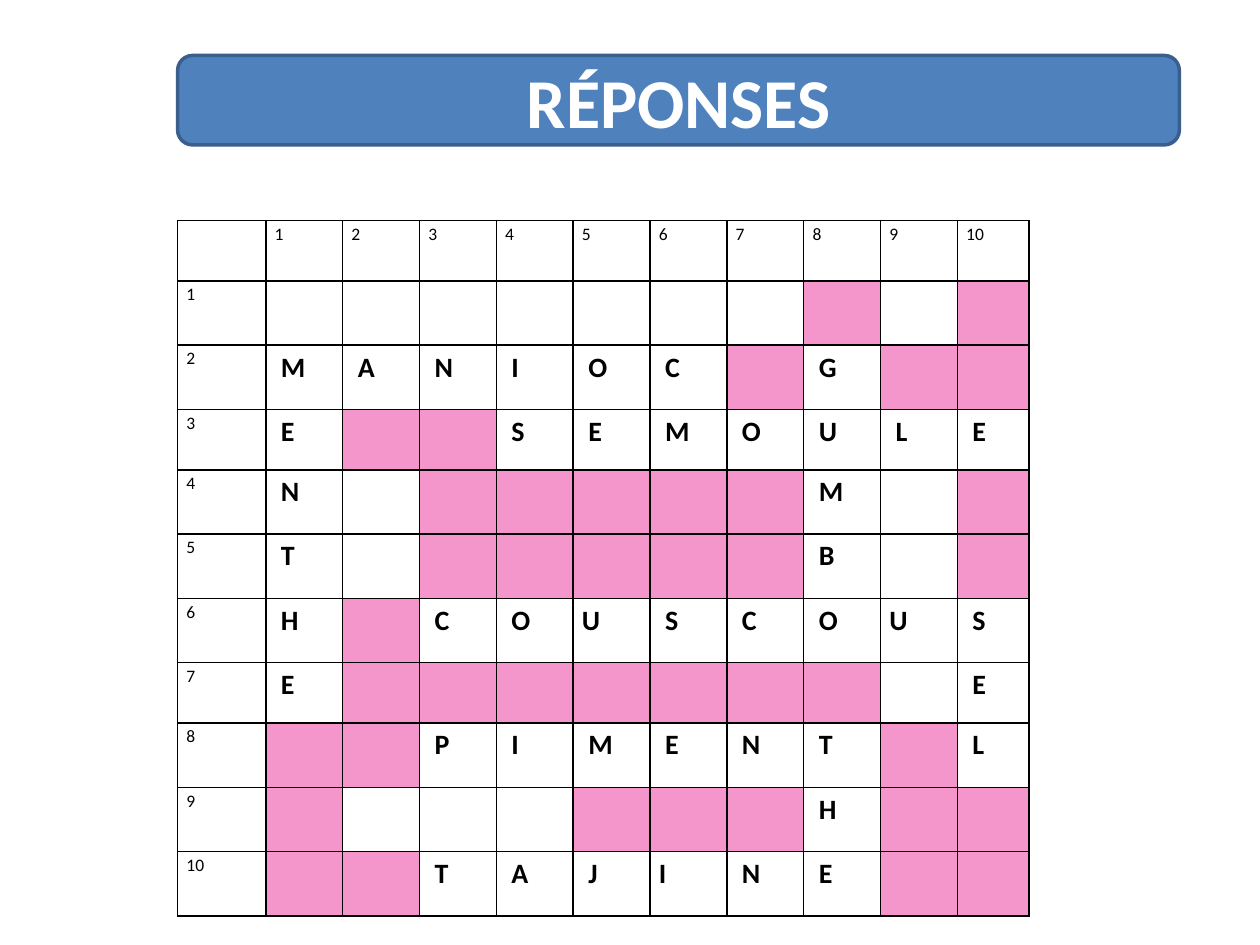
import lxml.etree
import pptx
import pptx.dml.color
import pptx.enum.shapes
import pptx.enum.text
import pptx.oxml.ns
import pptx.util

Inches = pptx.util.Inches
Pt = pptx.util.Pt

COLORS = {
    "banner": "4F81BD",
    "banner_line": "3A5F8C",
    "blocked": "F496CC",
    "white": "FFFFFF",
    "black": "000000",
}

# One string per crossword row: "#" is a blocked square, "." an empty one.
CROSSWORD = [
    ".......#.#",
    "MANIOC#G##",
    "E##SEMOULE",
    "N.#####M.#",
    "T.#####B.#",
    "H#COUSCOUS",
    "E#######.E",
    "##PIMENT#L",
    "#...###H##",
    "##TAJINE##",
]
FLUSH_LETTERS = {(6, 5), (6, 9), (10, 6)}  # (row, column) of letters without indent
COLUMN_WIDTHS = [0.7] + [0.61] * 9 + [0.57]
SHORT_ROWS = {0, 3, 7}
ROW_HEIGHTS = [0.48 if row in SHORT_ROWS else 0.51 for row in range(11)]


class SlideBuilder:
    font = "Calibri"
    cell_margin = 0.07
    letter_indent = 0.05

    def __init__(self, slide):
        self.slide = slide

    def color(self, name):
        return pptx.dml.color.RGBColor.from_string(COLORS[name])

    def format_text(self, p, size, color, bold=False):
        for r in p.runs:
            r.font.name = self.font
            r.font.size = Pt(size)
            r.font.bold = bold
            r.font.color.rgb = self.color(color)

    def banner(self, text, left, top, width, height):
        sp = self.slide.shapes.add_shape(
            pptx.enum.shapes.MSO_SHAPE.ROUNDED_RECTANGLE,
            Inches(left), Inches(top), Inches(width), Inches(height))
        sp.shadow.inherit = False
        sp.fill.solid()
        sp.fill.fore_color.rgb = self.color("banner")
        sp.line.color.rgb = self.color("banner_line")
        sp.line.width = Pt(2)
        tf = sp.text_frame
        tf.vertical_anchor = pptx.enum.text.MSO_ANCHOR.MIDDLE
        p = tf.paragraphs[0]
        p.text = text
        p.alignment = pptx.enum.text.PP_ALIGN.CENTER
        self.format_text(p, 40, "white", bold=True)

    def cell_borders(self, cell):
        tc_pr = cell._tc.get_or_add_tcPr()
        qn = pptx.oxml.ns.qn
        for side in ("a:lnL", "a:lnR", "a:lnT", "a:lnB"):
            ln = lxml.etree.SubElement(tc_pr, qn(side), w=str(Pt(1)))
            fill = lxml.etree.SubElement(ln, qn("a:solidFill"))
            lxml.etree.SubElement(fill, qn("a:srgbClr"), val=COLORS["black"])

    def cell(self, cell, text="", size=10, bold=False, indent=0, fill="white"):
        self.cell_borders(cell)
        cell.fill.solid()
        cell.fill.fore_color.rgb = self.color(fill)
        cell.margin_left = Inches(self.cell_margin + indent)
        cell.margin_right = Inches(self.cell_margin)
        cell.margin_top = cell.margin_bottom = 0
        p = cell.text_frame.paragraphs[0]
        p.text = text
        p.line_spacing = 1.15
        self.format_text(p, size, "black", bold)

    def crossword(self, left, top):
        table = self.slide.shapes.add_table(
            len(ROW_HEIGHTS), len(COLUMN_WIDTHS), Inches(left), Inches(top),
            Inches(sum(COLUMN_WIDTHS)), Inches(sum(ROW_HEIGHTS))).table
        table.first_row = table.horz_banding = False
        for column, width in zip(table.columns, COLUMN_WIDTHS):
            column.width = Inches(width)
        for row, height in zip(table.rows, ROW_HEIGHTS):
            row.height = Inches(height)

        self.cell(table.cell(0, 0))
        for number, squares in enumerate(CROSSWORD, 1):
            self.cell(table.cell(0, number), str(number))
            self.cell(table.cell(number, 0), str(number))
            for col, square in enumerate(squares, 1):
                cell = table.cell(number, col)
                if square == "#":
                    self.cell(cell, fill="blocked")
                elif square == ".":
                    self.cell(cell)
                else:
                    flush = (number, col) in FLUSH_LETTERS
                    indent = 0 if flush else self.letter_indent
                    self.cell(cell, square, 16, True, indent)


def main():
    prs = pptx.Presentation()
    prs.slide_width = Inches(10)
    prs.slide_height = Inches(7.5)
    s = SlideBuilder(prs.slides.add_slide(prs.slide_layouts[6]))
    s.banner("RÉPONSES", 1.41, 0.44, 7.95, 0.71)
    s.crossword(1.41, 1.75)
    prs.save("out.pptx")


if __name__ == "__main__":
    main()
